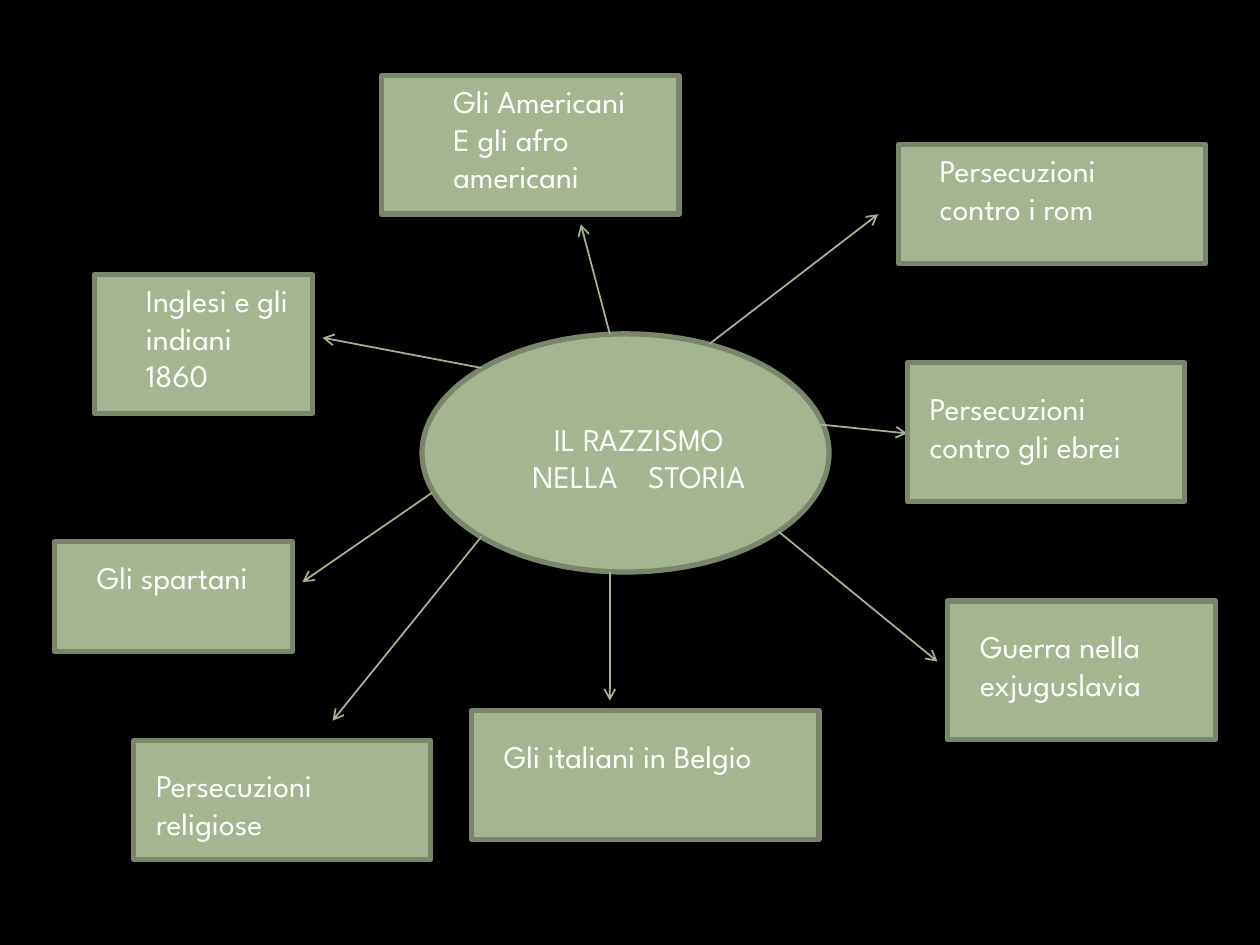
from dataclasses import dataclass

from lxml import etree
from pptx import Presentation
from pptx.dml.color import RGBColor
from pptx.enum.shapes import MSO_CONNECTOR, MSO_SHAPE
from pptx.enum.text import MSO_ANCHOR, MSO_AUTO_SIZE, PP_ALIGN
from pptx.oxml.ns import qn
from pptx.util import Inches, Pt

ELLIPSE, RECTANGLE = MSO_SHAPE.OVAL, MSO_SHAPE.RECTANGLE
STRAIGHT = MSO_CONNECTOR.STRAIGHT
LEFT, CENTER = PP_ALIGN.LEFT, PP_ALIGN.CENTER
TOP = MSO_ANCHOR.TOP
FIXED_SIZE = MSO_AUTO_SIZE.NONE
TITLE_ONLY = 5


@dataclass(frozen=True)
class Theme:
    background: RGBColor = RGBColor(0x00, 0x00, 0x00)
    fill: RGBColor = RGBColor(0xA5, 0xB5, 0x92)
    border: RGBColor = RGBColor(0x7A, 0x86, 0x6C)
    text: RGBColor = RGBColor(0xFF, 0xFF, 0xFF)
    font: str = "League Spartan"
    text_size: int = 18
    border_width: int = 3
    arrow_width: int = 1
    word_gap: int = 13  # extra points after the space between title words


class MapSlide:
    def __init__(self, slide, theme):
        self.slide = slide
        self.theme = theme
        background = slide.background.fill
        background.solid()
        background.fore_color.rgb = theme.background

    def node(self, preset, box):
        shape = self.slide.shapes.add_shape(preset, *map(Inches, box))
        shape.shadow.inherit = False
        shape.fill.solid()
        shape.fill.fore_color.rgb = self.theme.fill
        shape.line.color.rgb = self.theme.border
        shape.line.width = Pt(self.theme.border_width)

    def arrow(self, start, end):
        line = self.slide.shapes.add_connector(STRAIGHT, *map(Inches, start + end))
        line.line.color.rgb = self.theme.fill
        line.line.width = Pt(self.theme.arrow_width)
        properties = line._element.spPr
        etree.SubElement(properties.find(qn("a:ln")), qn("a:tailEnd"), type="arrow")
        etree.SubElement(properties, qn("a:effectLst"))

    def add_text(self, paragraph, text):
        run = paragraph.add_run()
        run.text = text
        run.font.name = self.theme.font
        run.font.size = Pt(self.theme.text_size)
        run.font.color.rgb = self.theme.text
        return run

    def fill_frame(self, frame, lines, align):
        """Fill a frame; each line is a list of run texts."""
        frame.word_wrap = True
        frame.auto_size = FIXED_SIZE
        frame.vertical_anchor = TOP
        for index, texts in enumerate(lines):
            paragraph = frame.add_paragraph() if index else frame.paragraphs[0]
            paragraph.alignment = align
            for text in texts:
                run = self.add_text(paragraph, text)
                if text == " ":
                    run.font._element.set("spc", str(self.theme.word_gap * 100))

    def label(self, box, lines):
        textbox = self.slide.shapes.add_textbox(*map(Inches, box))
        self.fill_frame(textbox.text_frame, [[line] for line in lines], LEFT)

    def title(self, box, lines):
        """Place the title in front of the shapes drawn so far."""
        title = self.slide.shapes.title
        title.left, title.top, title.width, title.height = map(Inches, box)
        title.text_frame.margin_left = Inches(0.32)
        self.fill_frame(title.text_frame, lines, CENTER)
        self.slide.shapes._spTree.append(title._element)


# Each topic: arrow start, arrow end, node box, label box, label lines
TOPICS = [
    ((3.82, 2.92), (2.56, 2.68), (0.75, 2.18, 1.73, 1.1),
     (1.06, 2.18, 1.5, 1.01), ["Inglesi e gli indiani", "1860"]),
    ((3.43, 3.91), (2.4, 4.62), (0.43, 4.3, 1.89, 0.87),
     (0.67, 4.38, 1.57, 0.71), ["Gli spartani"]),
    ((4.84, 2.65), (4.61, 1.78), (3.03, 0.6, 2.36, 1.1),
     (3.5, 0.6, 2.13, 1.01), ["Gli Americani", "E gli afro americani"]),
    ((6.42, 3.36), (7.2, 3.44), (7.2, 2.88, 2.2, 1.1),
     (7.28, 3.04, 2.05, 0.71), ["Persecuzioni contro gli ebrei"]),
    ((6.18, 4.22), (7.44, 5.25), (7.52, 4.77, 2.13, 1.1),
     (7.68, 4.93, 1.89, 0.71), ["Guerra nella exjuguslavia"]),
    ((5.63, 2.73), (6.97, 1.7), (7.13, 1.15, 2.44, 0.94),
     (7.36, 1.15, 2.05, 0.71), ["Persecuzioni contro i rom"]),
    ((4.84, 4.54), (4.84, 5.56), (3.74, 5.64, 2.76, 1.02),
     (3.9, 5.8, 2.28, 0.71), ["Gli italiani in Belgio"]),
    ((3.82, 4.26), (2.64, 5.72), (1.06, 5.88, 2.36, 0.94),
     (1.14, 6.03, 2.2, 0.71), ["Persecuzioni religiose"]),
]


def main():
    presentation = Presentation()
    presentation.slide_width = Inches(10)
    presentation.slide_height = Inches(7.5)
    layout = presentation.slide_layouts[TITLE_ONLY]
    history_map = MapSlide(presentation.slides.add_slide(layout), Theme())

    history_map.node(ELLIPSE, (3.35, 2.65, 3.23, 1.89))
    history_map.title((3.82, 3.28, 2.28, 0.71),
                      [["IL RAZZISMO"], ["NELLA", " ", "STORIA"]])
    for start, end, node_box, label_box, lines in TOPICS:
        history_map.arrow(start, end)
        history_map.node(RECTANGLE, node_box)
        history_map.label(label_box, lines)

    presentation.save("out.pptx")


if __name__ == "__main__":
    main()
